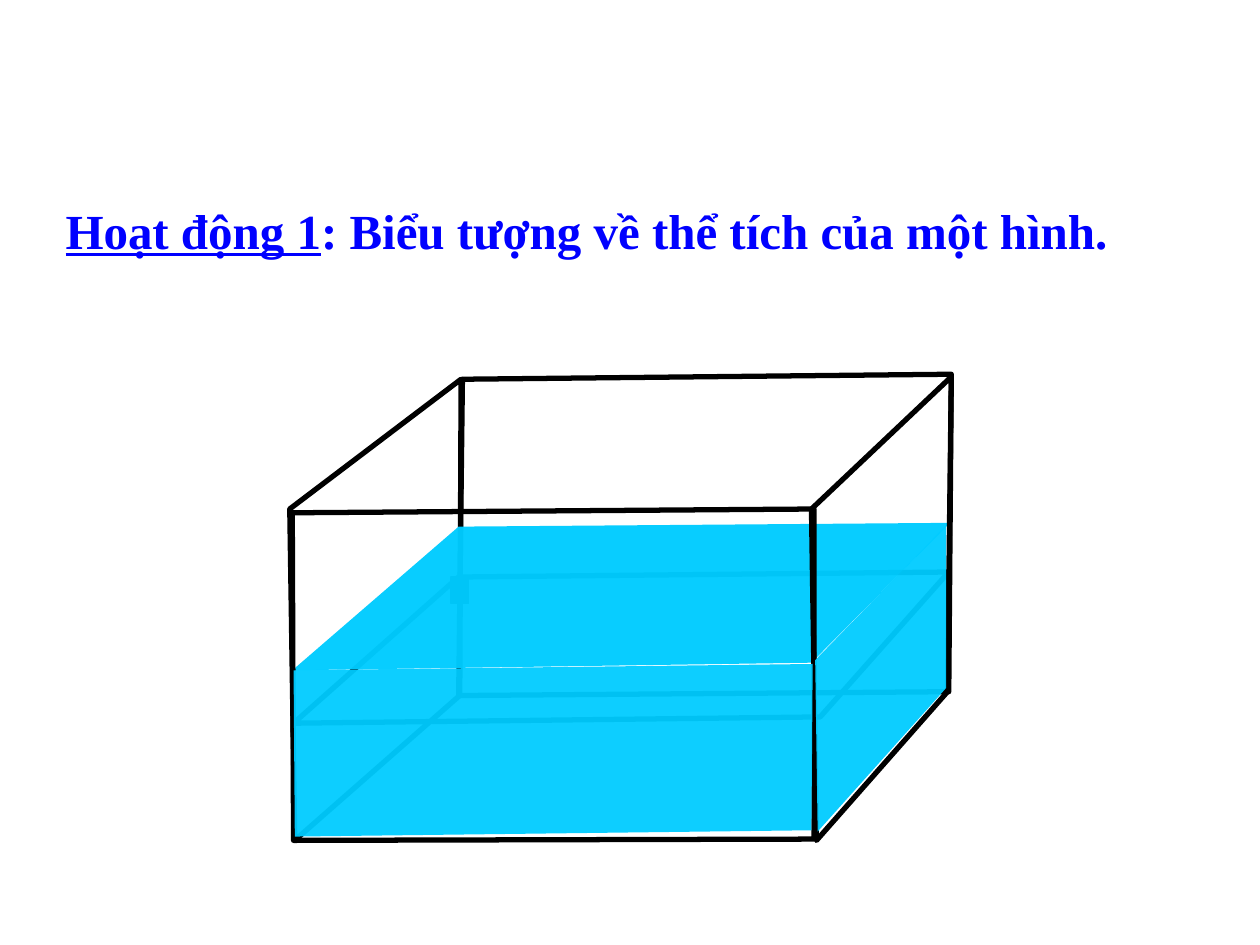
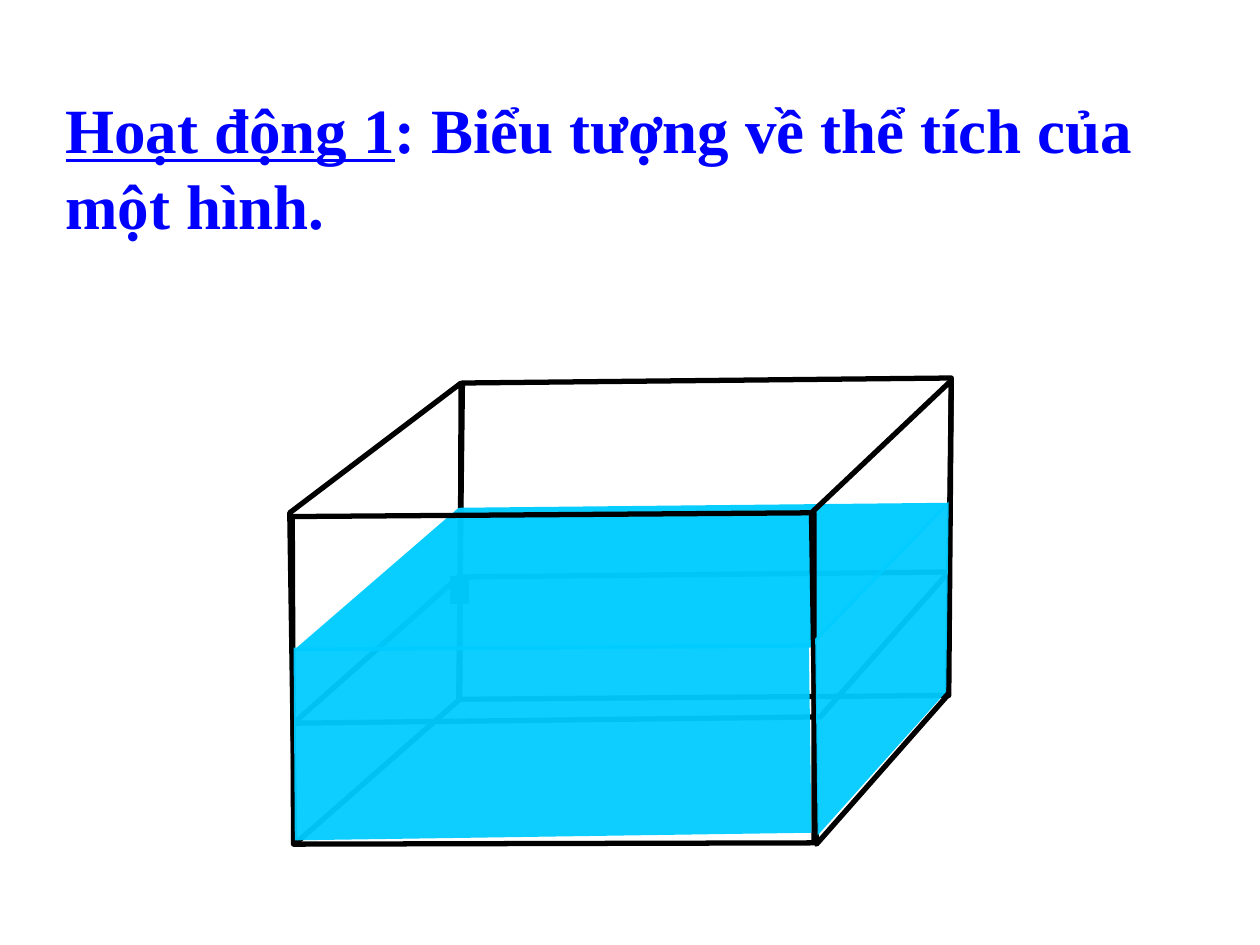
from pptx import Presentation
from pptx.dml.color import RGBColor as RGB
from pptx.enum.shapes import MSO_SHAPE as Preset
from pptx.enum.text import MSO_ANCHOR as Anchor, MSO_AUTO_SIZE as AutoSize, PP_ALIGN as Align
from pptx.oxml.ns import qn
from pptx.util import Inches, Pt
from lxml.etree import SubElement

COLORS = {"heading": "0000FF", "edge": "000000", "water": "00CCFF"}
FONT = "Times New Roman"
WIDTH, HEIGHT = Inches(10), Inches(7.5)
GRID = 100  # drawing units per inch
HEADING_RUNS = [("Hoạt động 1", True), (": Biểu tượng về thể tích của một hình.", False)]

# Tank faces, as corners in inches
LEFT_FACE = [(2.3, 4.04), (3.66, 3.01), (3.65, 5.52), (2.34, 6.67)]
BACK_FACE = [(3.64, 5.52), (7.53, 5.49), (7.55, 2.97), (3.67, 3.01)]
FRONT_FACE = [(2.33, 6.67), (6.46, 6.66), (6.46, 4.04), (2.32, 4.07)]
RIGHT_FACE = [(6.44, 4.04), (7.55, 2.99), (7.52, 5.49), (6.48, 6.67)]
LEVEL_MARK = [(2.33, 5.74), (3.64, 4.58), (7.53, 4.54), (6.51, 5.69)]

# Each stage: heading place and size, tank drop, and the three water faces
STAGES = [
    {"heading_top": 1.54, "heading_height": 1.04, "heading_size": 28, "drop": 0,
     "surface": [(2.32, 5.32), (3.64, 4.18), (7.54, 4.15), (6.44, 5.26)],
     "front": [(2.33, 5.32), (6.45, 5.27), (6.44, 6.59), (2.34, 6.64)],
     "right": [(7.51, 4.17), (6.47, 5.24), (6.49, 6.6), (7.51, 5.46)]},
    {"heading_top": 0.67, "heading_height": 1.78, "heading_size": 36, "drop": 0.03,
     "surface": [(2.32, 5.17), (3.64, 4.03), (7.54, 3.99), (6.43, 5.14)],
     "front": [(2.33, 5.14), (6.42, 5.11), (6.44, 6.61), (2.34, 6.67)],
     "right": [(7.53, 3.98), (6.47, 5.07), (6.49, 6.63), (7.51, 5.49)]},
]


def color(name):
    return RGB.from_string(COLORS[name])


def add_heading(slide, stage):
    heading = slide.shapes.title
    heading.left, heading.top = Inches(0.42), Inches(stage["heading_top"])
    heading.width, heading.height = Inches(9.25), Inches(stage["heading_height"])
    frame = heading.text_frame
    frame.word_wrap = True
    frame.vertical_anchor = Anchor.TOP
    frame.auto_size = AutoSize.SHAPE_TO_FIT_TEXT
    line = frame.paragraphs[0]
    line.alignment = Align.LEFT
    for words, underlined in HEADING_RUNS:
        run = line.add_run()
        run.text = words
        run.font.name, run.font.size = FONT, Pt(stage["heading_size"])
        run.font.bold, run.font.underline = True, underlined
        run.font.color.rgb = color("heading")


def add_face(slide, corners, drop=0):
    """Draw a closed four-cornered outline, moved down by drop inches."""
    points = [(round(x * GRID), round((y + drop) * GRID)) for x, y in corners]
    builder = slide.shapes.build_freeform(*points[0], scale=Inches(1) / GRID)
    builder.add_line_segments(points[1:], close=True)
    face = builder.convert_to_shape()
    face.shadow.inherit = False
    return face


def add_glass(slide, corners, drop=0):
    glass = add_face(slide, corners, drop)
    glass.fill.background()
    glass.line.color.rgb = color("edge")
    glass.line.width = Pt(3)


def add_water(slide, corners, opacity):
    water = add_face(slide, corners)
    water.fill.solid()
    water.fill.fore_color.rgb = color("water")
    tint = water.fill._xPr.find(qn("a:solidFill"))[0]
    SubElement(tint, qn("a:alpha")).set("val", str(opacity * 1000))
    water.line.fill.background()


def add_stone(slide):
    stone = slide.shapes.add_shape(
        Preset.RECTANGLE, Inches(3.58), Inches(4.58), Inches(0.14), Inches(0.21))
    stone.shadow.inherit = False
    stone.fill.solid()
    stone.fill.fore_color.rgb = color("edge")
    stone.line.color.rgb = color("edge")
    stone.line.width = Pt(0.75)


def add_tank(slide, stage):
    drop = stage["drop"]
    # Parts behind the water surface
    add_stone(slide)
    add_glass(slide, LEFT_FACE, drop)
    add_glass(slide, BACK_FACE, drop)
    add_glass(slide, LEVEL_MARK)
    add_water(slide, stage["surface"], 97)
    # Near sides of the tank and of the water
    add_glass(slide, FRONT_FACE, drop)
    add_glass(slide, RIGHT_FACE, drop)
    add_water(slide, stage["front"], 95)
    add_water(slide, stage["right"], 95)


def main():
    deck = Presentation()
    deck.slide_width, deck.slide_height = WIDTH, HEIGHT
    title_only = deck.slide_layouts[5]
    for stage in STAGES:
        slide = deck.slides.add_slide(title_only)
        add_tank(slide, stage)
        add_heading(slide, stage)
    deck.save("out.pptx")


if __name__ == "__main__":
    main()
